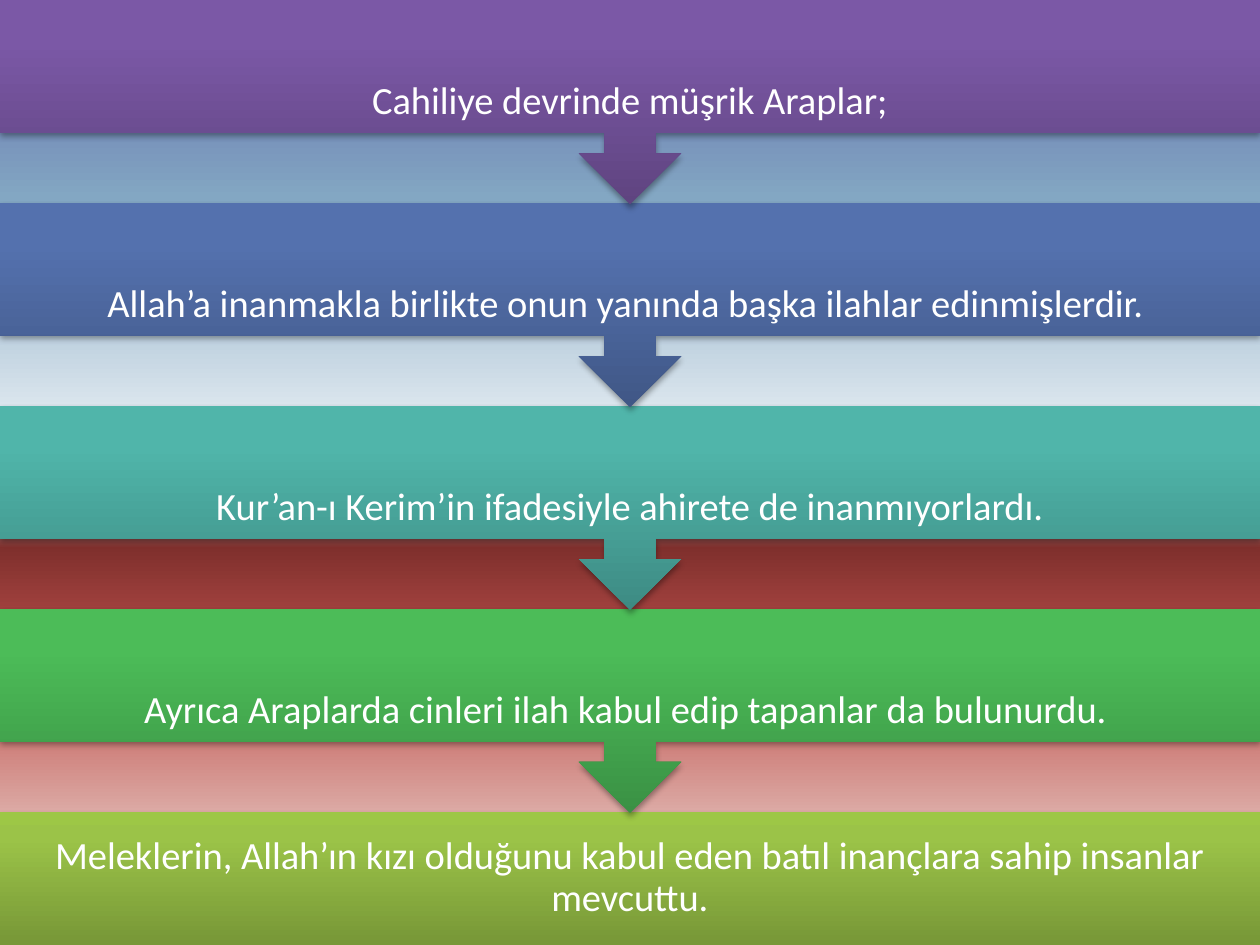
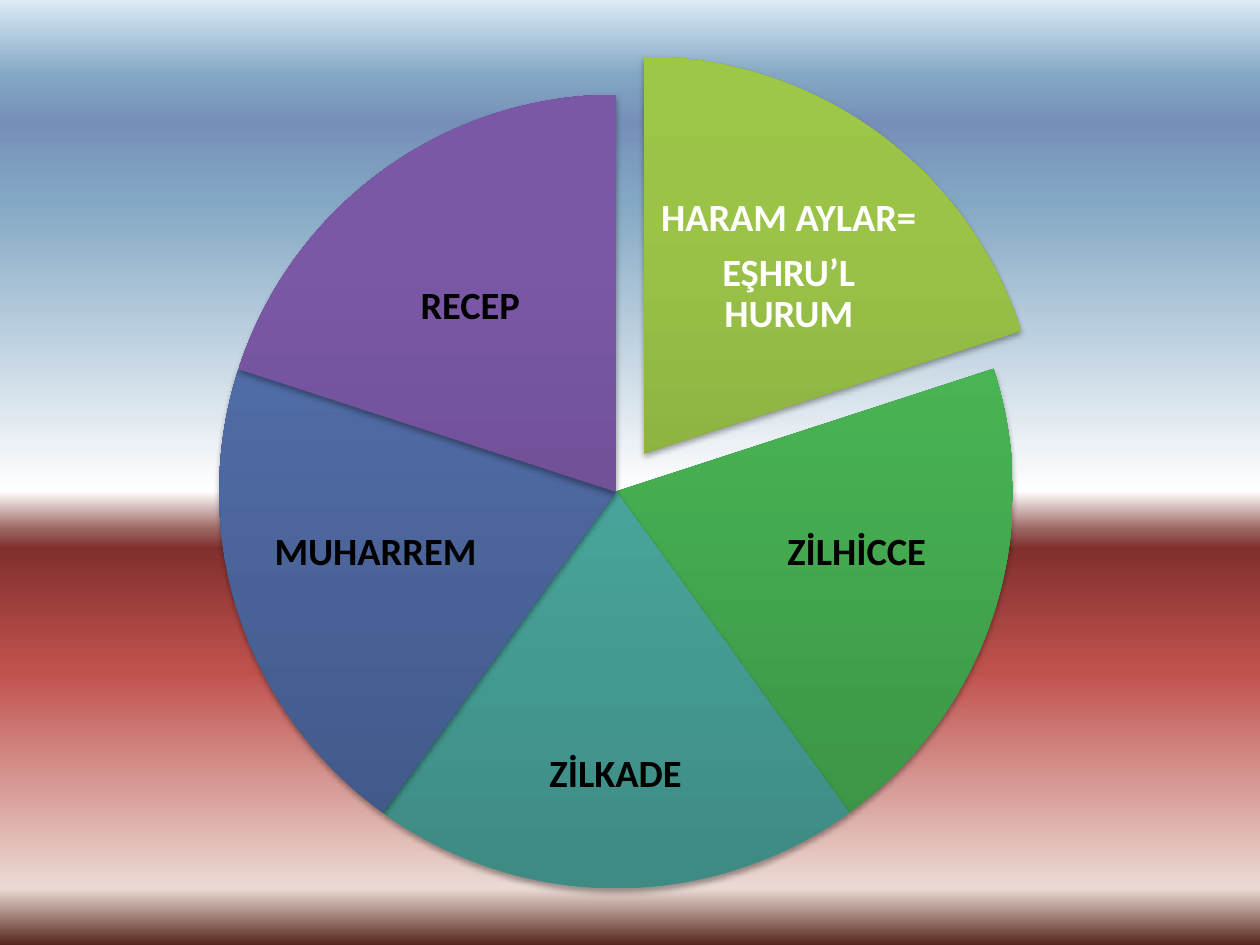
import pptx
import pptx.util
import pptx.dml.color
import pptx.enum.shapes
import pptx.enum.text
import pptx.oxml
from pptx.oxml.ns import nsdecls, qn

Cm = pptx.util.Cm
MSO_SHAPE = pptx.enum.shapes.MSO_SHAPE

PURPLE = [(0, "5F4480"), (80, "7B58A6"), (100, "7C57A8")]
BLUE = [(0, "405786"), (80, "5471AE"), (100, "5271B0")]
TEAL = [(0, "3D8B83"), (80, "50B5AA"), (100, "4EB8AC")]
GREEN = [(0, "3A9144"), (80, "4CBC58"), (100, "4ABF57")]
LIME = [(0, "779737"), (80, "9BC348"), (100, "9DC746")]
SKY = [(0, "DCEBF5"), (8, "83A7C3"), (13, "768FB9"), (21, "83A7C3"), (52, "FFFFFF"),
       (56, "9C6563"), (58, "80302D"), (71, "C0524E"), (94, "EBDAD4"), (100, "55261C")]
WHITE, BLACK = "FFFFFF", "000000"


def rgb(value):
    return pptx.dml.color.RGBColor.from_string(value)


class Deck:
    font = "Calibri"
    size = 22

    def __init__(self):
        self.prs = pptx.Presentation()
        self.prs.slide_width, self.prs.slide_height = Cm(25.4), Cm(19.05)
        self.s = None

    def slide(self):
        self.s = self.prs.slides.add_slide(self.prs.slide_layouts[6])
        self.gradient(self.s.background.fill, self.s.element, SKY, 270)

    def gradient(self, fill, element, stops, angle):
        fill.gradient()
        fill.gradient_angle = angle
        grad = element.find(".//" + qn("a:gradFill"))
        grad.set("rotWithShape", "0")
        gs_list = grad.find(qn("a:gsLst"))
        for gs in list(gs_list):
            gs_list.remove(gs)
        for position, color in stops:
            gs_list.append(pptx.oxml.parse_xml(
                f'<a:gs {nsdecls("a")} pos="{position * 1000}">'
                f'<a:srgbClr val="{rgb(color)}"/></a:gs>'))

    def shape(self, kind, left, top, width, height, stops, rotation=0):
        sp = self.s.shapes.add_shape(kind, Cm(left), Cm(top), Cm(width), Cm(height))
        sp.rotation = rotation
        self.gradient(sp.fill, sp.element, stops, 90)
        sp.line.fill.background()
        sp.shadow.inherit = False
        sp.element.spPr.find(qn("a:effectLst")).append(pptx.oxml.parse_xml(
            f'<a:outerShdw {nsdecls("a")} blurRad="40000" dist="23000" dir="5400000" '
            f'rotWithShape="0"><a:srgbClr val="{BLACK}"><a:alpha val="35000"/>'
            '</a:srgbClr></a:outerShdw>'))
        return sp

    def slice(self, left, top, diameter, start, sweep, stops):
        sp = self.shape(MSO_SHAPE.PIE, left, top, diameter, diameter, stops)
        for i, angle in enumerate((start, start + sweep)):
            sp.adjustments[i] = angle % 360 * 0.6

    def text(self, left, top, width, height, lines, color, inset, bold=False):
        sp = self.s.shapes.add_textbox(Cm(left), Cm(top), Cm(width), Cm(height))
        tf = sp.text_frame
        tf.word_wrap = True
        tf.vertical_anchor = pptx.enum.text.MSO_ANCHOR.MIDDLE
        tf.margin_left = tf.margin_right = tf.margin_top = tf.margin_bottom = Cm(inset)
        for i, line in enumerate(lines):
            p = tf.add_paragraph() if i else tf.paragraphs[0]
            p.alignment = pptx.enum.text.PP_ALIGN.CENTER
            p.line_spacing = 0.9
            p.space_after = pptx.util.Pt(self.size * 0.35)
            r = p.add_run()
            r.text = line
            r.font.name = self.font
            r.font.size = pptx.util.Pt(self.size)
            r.font.bold = bold
            r.font.color.rgb = rgb(color)


def beliefs(deck):
    deck.slide()
    steps = [
        ("Cahiliye devrinde müşrik Araplar;", PURPLE),
        ("Allah’a inanmakla birlikte onun yanında başka ilahlar edinmişlerdir. ", BLUE),
        ("Kur’an-ı Kerim’in ifadesiyle ahirete de inanmıyorlardı.", TEAL),
        ("Ayrıca Araplarda cinleri ilah kabul edip tapanlar da bulunurdu. ", GREEN),
        ("Meleklerin, Allah’ın kızı olduğunu kabul eden batıl inançlara sahip "
         "insanlar mevcuttu.", LIME),
    ]
    pitch, last = 4.09, len(steps) - 1
    for i, (line, stops) in reversed(list(enumerate(steps))):
        if i == last:
            kind, height, rotation = MSO_SHAPE.RECTANGLE, 2.69, 0
        else:
            kind, height, rotation = MSO_SHAPE.UP_ARROW_CALLOUT, 4.12, 180
        deck.shape(kind, 0, i * pitch, 25.4, height, stops, rotation)
        deck.text(0, i * pitch, 25.4, height, [line], WHITE, 0.43)


def sacred_months(deck):
    deck.slide()
    diameter, sweep = 16, 72
    home, pulled = (4.42, 1.91), (4.98, 1.14)
    slices = [
        (["HARAM AYLAR=", "EŞHRU’L HURUM"], LIME, WHITE, pulled, (13.18, 3.53, 5.44, 3.71)),
        (["ZİLHİCCE"], GREEN, BLACK, home, (14.88, 9.14, 4.78, 4.01)),
        (["ZİLKADE"], TEAL, BLACK, home, (9.55, 13.92, 5.72, 3.43)),
        (["MUHARREM"], BLUE, BLACK, home, (5.18, 9.14, 4.78, 4.01)),
        (["RECEP"], PURPLE, BLACK, home, (6.76, 4.34, 5.44, 3.71)),
    ]
    for i, (lines, stops, color, corner, label) in enumerate(slices):
        deck.slice(*corner, diameter, 270 + i * sweep, sweep, stops)
        deck.text(*label, lines, color, 0.08, bold=True)


def main():
    deck = Deck()
    beliefs(deck)
    sacred_months(deck)
    deck.prs.save("out.pptx")


if __name__ == "__main__":
    main()
